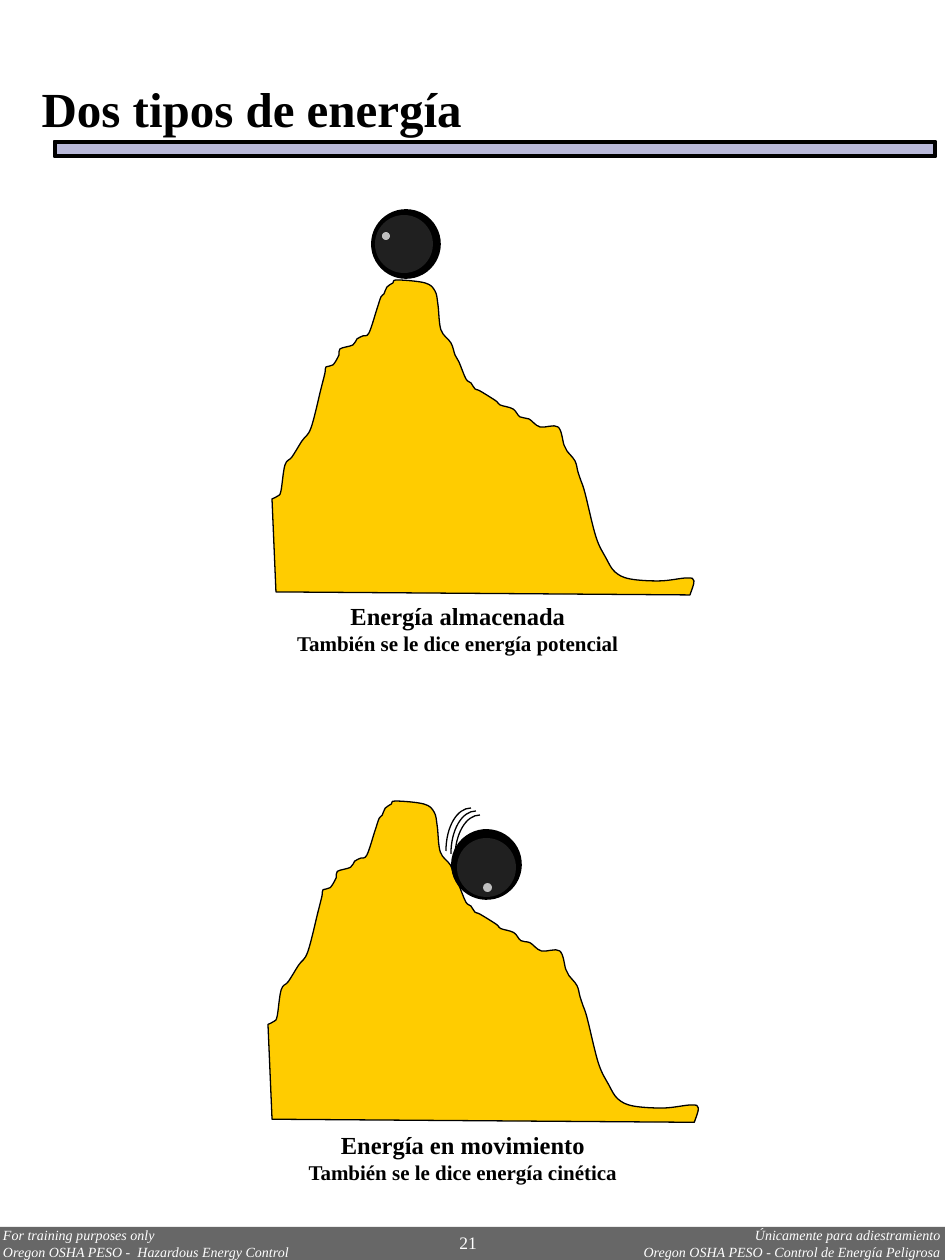
import lxml.etree
import pptx
import pptx.util
import pptx.dml.color
import pptx.enum.shapes
import pptx.enum.text
import pptx.oxml.ns

RGBColor = pptx.dml.color.RGBColor
Align = pptx.enum.text.PP_ALIGN
Shape = pptx.enum.shapes.MSO_SHAPE

BLACK = RGBColor(0x00, 0x00, 0x00)
WHITE = RGBColor(0xFF, 0xFF, 0xFF)
GREY = RGBColor(0x67, 0x67, 0x67)
BALL = RGBColor(0x20, 0x20, 0x20)
GLINT = RGBColor(0xC0, 0xC0, 0xC0)
EARTH = RGBColor(0xFF, 0xCC, 0x00)
LILAC = RGBColor(0xB9, 0xB9, 0xD9)

PX = 914400 // 126
FONT = "Times New Roman"

TITLE = "Dos tipos de energía"
TITLE_FRAME = (29, 72, 616, 72)
BAR_FRAME = (54, 141, 882, 16)
FOOTER_FRAME = (0, 1227, 945, 33)

CAPTIONS = [
    ((122, 595, 672, 68), "Energía almacenada", "También se le dice energía potencial"),
    ((127, 1124, 672, 68), "Energía en movimiento", "También se le dice energía cinética"),
]

FOOTERS = [
    ((513, 1227, 428, 33), Align.RIGHT,
     ["Únicamente para adiestramiento", "Oregon OSHA PESO - Control de Energía Peligrosa"]),
    ((3, 1227, 421, 33), Align.LEFT,
     ["For training purposes only", "Oregon OSHA PESO -  Hazardous Energy Control"]),
]
PAGE_NUMBER = ((447, 1226, 69, 34), "21")

RIDGE = [
    (0, 219), (6, 216), (9, 211), (13, 185), (20, 177), (30, 161), (39, 148),
    (49, 109), (53, 93), (54, 87), (61, 85), (67, 75), (68, 69), (81, 65),
    (85, 59), (91, 56), (97, 53), (105, 29), (109, 17), (112, 14), (115, 7),
    (121, 3), (125, 0), (153, 3), (163, 11), (166, 25), (169, 50), (179, 63),
    (183, 75), (187, 82), (194, 99), (199, 103), (203, 109), (208, 111),
    (224, 121), (228, 125), (241, 129), (248, 137), (257, 139), (268, 147),
    (286, 147), (292, 165), (295, 171), (303, 181), (306, 192), (309, 201),
    (313, 213), (324, 257), (334, 278), (343, 292), (358, 299), (388, 301),
    (415, 298), (422, 301), (418, 315),
]
HILL_BASE = (4, 312)

MOVING_HILL = (268, 801, 1.02)
MOVING_BALL = (144.1, [(452, 830, 69, BLACK), (457, 838, 59, BALL),
                       (465, 848, 45, BALL), (483, 883, 9, GLINT)])
RESTING_HILL = (272, 280, 1)
RESTING_BALL = (255.5, [(372, 210, 68, BLACK), (375, 215, 58, BALL),
                        (378, 220, 45, BALL), (382, 232, 8, GLINT)])

TRAIL = [(25, 0), (11, 0), (0, 19), (0, 43)]
TRAIL_PLACES = [(446, 808), (451, 811), (455, 815)]


def smooth(points):
    padded = [points[0]] + points + [points[-1]]
    curve = [points[0]]
    for a, b, c, d in zip(padded, padded[1:], padded[2:], padded[3:]):
        curve.append(tuple(q + (r - p) / 6 for p, q, r in zip(a, b, c)))
        curve.append(tuple(r - (s - q) / 6 for q, r, s in zip(b, c, d)))
        curve.append(c)
    return curve


def paint(shape, fill=None, line=None, width=0.75):
    shape.shadow.inherit = False
    if fill is None:
        shape.fill.background()
    else:
        shape.fill.solid()
        shape.fill.fore_color.rgb = fill
    if line is None:
        shape.line.fill.background()
    else:
        shape.line.color.rgb = line
        shape.line.width = pptx.util.Pt(width)


def add_shape(slide, kind, frame, fill, line=None):
    shape = slide.shapes.add_shape(kind, *(value * PX for value in frame))
    paint(shape, fill, line, 1)
    return shape


def add_curve(slide, curve, place, corners=(), fill=None):
    left, top, scale = place
    points = [(round((left + x * scale) * PX), round((top + y * scale) * PX))
              for x, y in [*curve, *corners]]
    builder = slide.shapes.build_freeform(*points[0])
    builder.add_line_segments(points[1:], close=bool(corners))
    shape = builder.convert_to_shape()
    qn = pptx.oxml.ns.qn
    lines = list(shape.element.iter(qn("a:lnTo")))[:len(curve) - 1]
    for first, second, third in zip(lines[::3], lines[1::3], lines[2::3]):
        bend = lxml.etree.Element(qn("a:cubicBezTo"))
        first.addprevious(bend)
        for line in (first, second, third):
            bend.append(line[0])
            line.getparent().remove(line)
    paint(shape, fill, BLACK)


def add_hill(slide, place):
    add_curve(slide, smooth(RIDGE), place, [HILL_BASE], EARTH)


def add_ball(slide, ball):
    rotation, discs = ball
    for left, top, size, color in discs:
        disc = add_shape(slide, Shape.OVAL, (left, top, size, size), color,
                         BLACK if color == BLACK else None)
        disc.rotation = rotation


def write(box, lines, color, align=Align.LEFT, inset=None, **style):
    frame = box.text_frame
    frame.word_wrap = True
    frame.auto_size = pptx.enum.text.MSO_AUTO_SIZE.NONE
    frame.vertical_anchor = pptx.enum.text.MSO_ANCHOR.TOP
    if inset is not None:
        for side in ("left", "top", "right", "bottom"):
            setattr(frame, "margin_" + side, inset)
    for index, (text, size) in enumerate(lines):
        para = frame.add_paragraph() if index else frame.paragraphs[0]
        para.alignment = align
        span = para.add_run()
        span.text = text
        span.font.color.rgb = color
        for name, value in dict(style, name=FONT, size=pptx.util.Pt(size)).items():
            setattr(span.font, name, value)


def add_text(slide, frame, lines, color, **style):
    box = slide.shapes.add_textbox(*(value * PX for value in frame))
    write(box, lines, color, **style)


def main():
    deck = pptx.Presentation()
    deck.slide_width, deck.slide_height = 945 * PX, 1260 * PX
    slide = deck.slides.add_slide(deck.slide_layouts[5])

    title = slide.shapes.title
    for name, value in zip(("left", "top", "width", "height"), TITLE_FRAME):
        setattr(title, name, value * PX)
    write(title, [(TITLE, 28)], BLACK, bold=True)

    add_shape(slide, Shape.RECTANGLE, FOOTER_FRAME, GREY)
    for frame, align, lines in FOOTERS:
        add_text(slide, frame, [(line, 8) for line in lines], WHITE,
                 align=align, inset=0, italic=True)
    frame, number = PAGE_NUMBER
    add_text(slide, frame, [(number, 10)], WHITE)

    for frame, heading, detail in CAPTIONS:
        add_text(slide, frame, [(heading, 14), (detail, 12)], BLACK,
                 align=Align.CENTER, bold=True)

    add_hill(slide, MOVING_HILL)
    add_ball(slide, MOVING_BALL)
    for left, top in TRAIL_PLACES:
        add_curve(slide, TRAIL, (left, top, 1))
    add_ball(slide, RESTING_BALL)
    add_hill(slide, RESTING_HILL)

    bar = add_shape(slide, Shape.BEVEL, BAR_FRAME, LILAC, BLACK)
    bar.adjustments[0] = 0.125
    deck.save("out.pptx")


if __name__ == "__main__":
    main()
